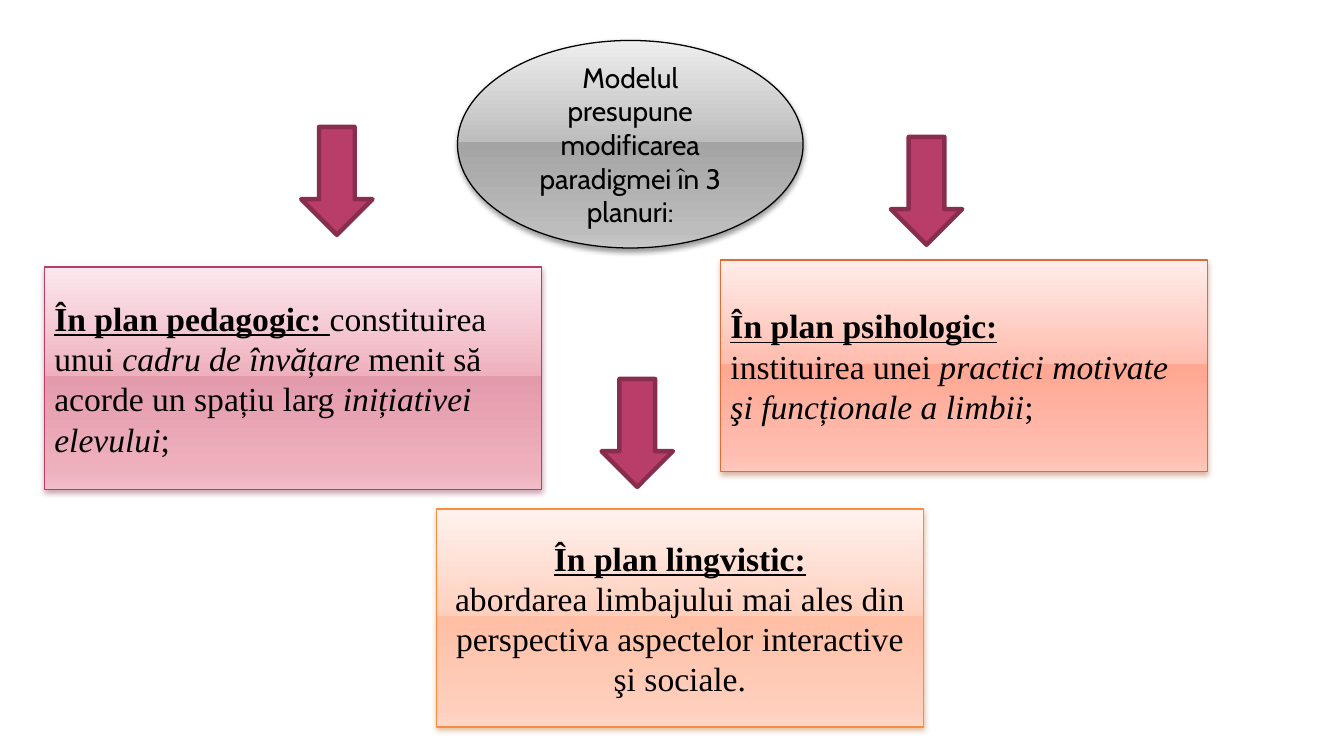
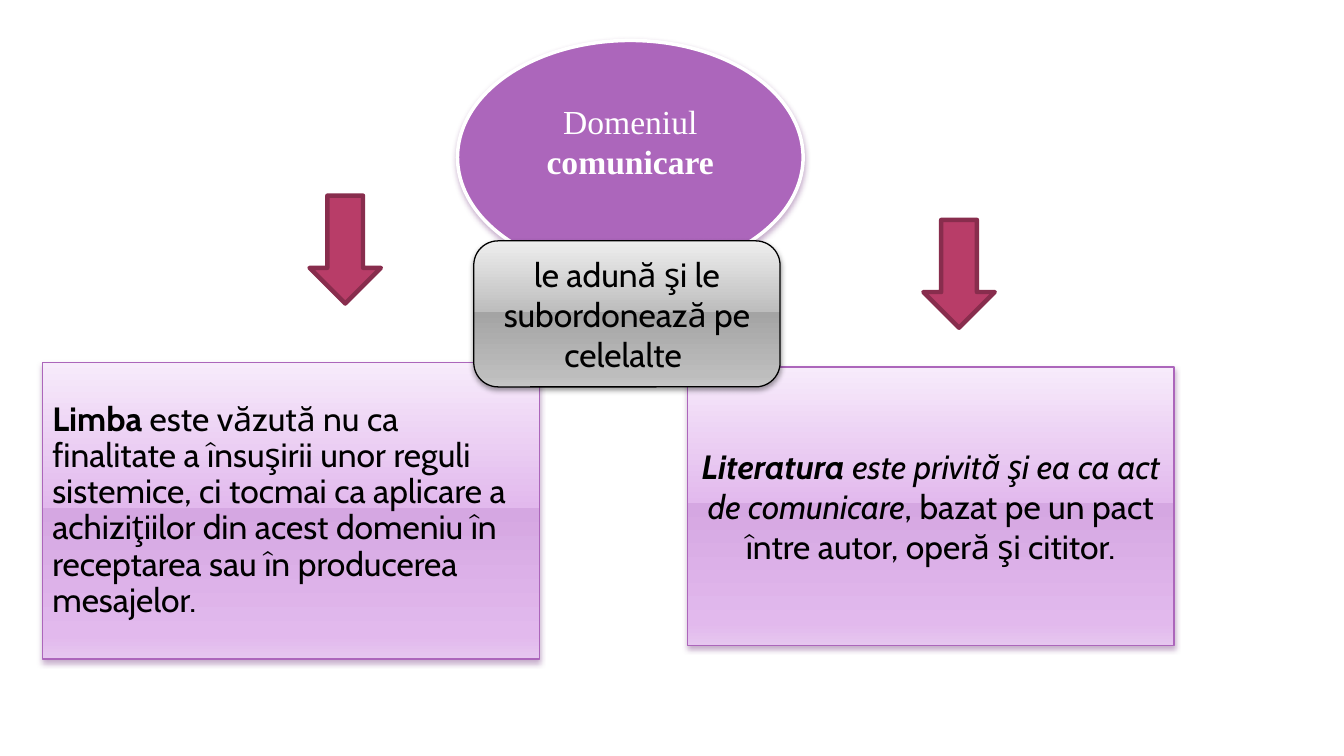
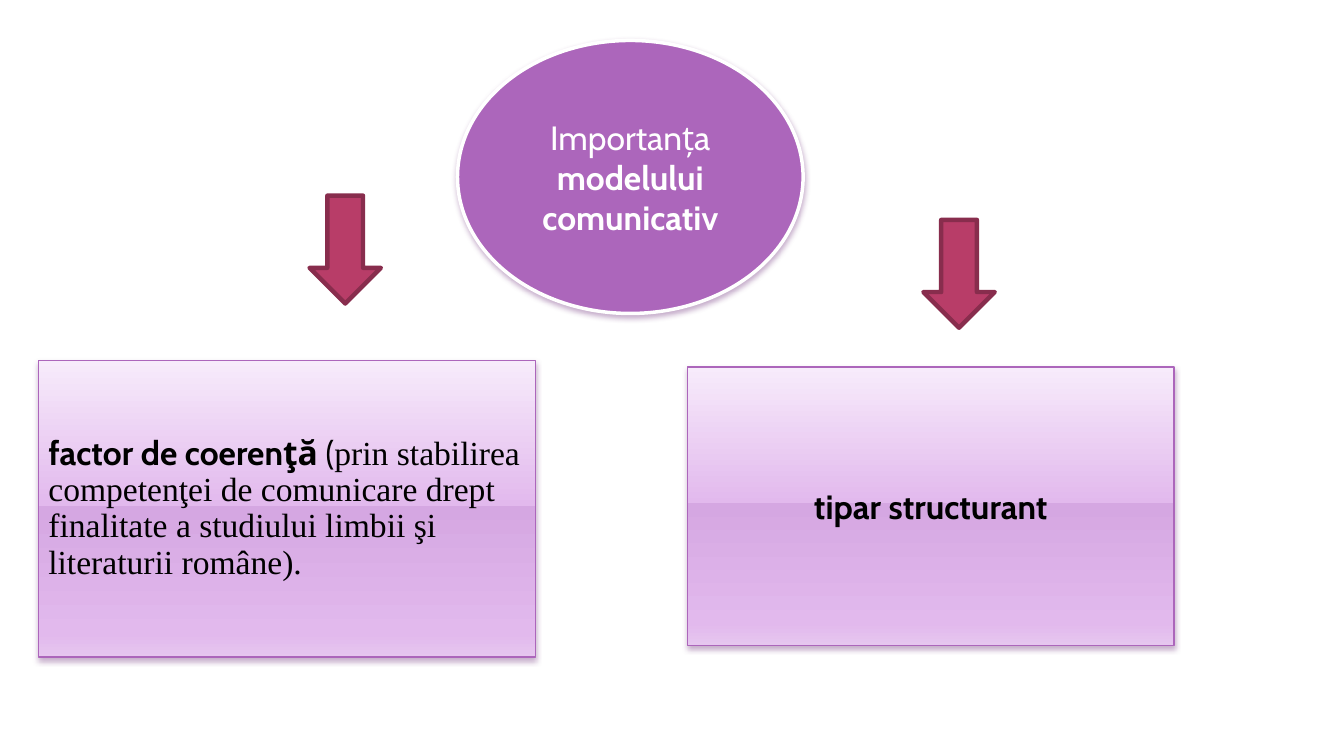
from lxml import etree
from pptx import Presentation
from pptx import util as u
from pptx.dml import color
from pptx.enum import shapes, text
from pptx.oxml import ns

SHAPE = shapes.MSO_SHAPE
LEFT, CENTER = text.PP_ALIGN.LEFT, text.PP_ALIGN.CENTER
SERIF, SANS = "Times New Roman", "Cabin"
BOLD = {"bold": True}
ITALIC = {"italic": True}
HEADING = {"bold": True, "underline": True}
STOPS = (0, 49, 49, 92, 100)
BLACK, WHITE = "000000", "FFFFFF"
STYLES = {
    "grey": dict(fill="EEEEEE BDBDBD A4A4A4 BDBDBD C8C8C8", line=BLACK, shadow=BLACK),
    "rose": dict(fill="FCE8ED EFB0BE E39BAC EFB0BE F0BEC9", line="B83D68", shadow="7F1238"),
    "coral": dict(fill="FFEDEA FFBDAF FFA793 FFBDAF FFC8BC", line="DE6C36", shadow="9C3707"),
    "peach": dict(fill="FFF2EE FFCFBD FFBFA5 FFCFBD FFD7C8", line="FA8D3D", shadow="B04F08"),
    "lilac": dict(fill="F7EBFB E2B9ED D5A7E2 E2B9ED E6C6EF", line="AC66BB", shadow="6E307B"),
    "violet": dict(fill="AC66BB", line=WHITE, width=2.5, shadow="6E307B"),
    "arrow": dict(fill="B83D68", line="882D4D", width=3.15),
}


def rgb(value):
    """Turn a hex string into a colour."""
    return color.RGBColor.from_string(value)


def add_node(parent, tag, **attrs):
    """Append a DrawingML element with the given attributes."""
    return etree.SubElement(parent, ns.qn("a:" + tag), {k: str(v) for k, v in attrs.items()})


def paint(sp, fill, line, width=0.9, shadow=None):
    """Give a shape its fill, outline and soft shadow."""
    stops = fill.split()
    if len(stops) == 1:
        sp.fill.solid()
        sp.fill.fore_color.rgb = rgb(fill)
    else:
        sp.fill.gradient()
        sp.fill.gradient_angle = 270
        gs_list = next(sp._element.spPr.iter(ns.qn("a:gsLst")))
        for old in list(gs_list):
            gs_list.remove(old)
        for position, stop in zip(STOPS, stops):
            add_node(add_node(gs_list, "gs", pos=position * 1000), "srgbClr", val=stop)
    sp.line.color.rgb = rgb(line)
    sp.line.width = u.Pt(width)
    sp.shadow.inherit = False
    if shadow:
        effects = sp._element.spPr.find(ns.qn("a:effectLst"))
        outer = add_node(effects, "outerShdw", blurRad=u.Pt(4), dist=u.Pt(2),
                         dir=5400000, rotWithShape=0)
        add_node(add_node(outer, "srgbClr", val=shadow), "alpha", val=38000)


def add_shape(s, kind, box, style):
    """Place a painted preset shape in a box given in centimetres."""
    sp = s.shapes.add_shape(kind, *map(u.Cm, box))
    paint(sp, **STYLES[style])
    return sp


def panel(s, kind, box, style, paragraphs, font=SANS, size=24, ink=BLACK,
          align=CENTER, spacing=None, **margins):
    """Place a shape with centred-in-height text made of (text, format) runs."""
    tf = add_shape(s, kind, box, style).text_frame
    tf.word_wrap = True
    tf.vertical_anchor = text.MSO_ANCHOR.MIDDLE
    for side, value in margins.items():
        setattr(tf, "margin_" + side, u.Cm(value))
    for i, runs in enumerate(paragraphs):
        p = tf.add_paragraph() if i else tf.paragraphs[0]
        p.alignment = align
        p.line_spacing = spacing
        for words, extra in runs:
            r = p.add_run()
            r.text = words
            r.font.color.rgb = rgb(ink)
            for name, value in {"name": font, "size": u.Pt(size), **extra}.items():
                setattr(r.font, name, value)


def arrows(s, corners):
    """Place a down arrow at each top left corner."""
    for x, y in corners:
        add_shape(s, SHAPE.DOWN_ARROW, (x, y, 1.8, 2.72), "arrow")


def hub(s, height, style, paragraphs, **options):
    """Place the ellipse that heads each slide."""
    panel(s, SHAPE.OVAL, (11.53, 1.02, 8.71, height), style, paragraphs, **options)


def plans_slide(s):
    """Build the slide of the three plans."""
    hub(s, 5.23, "grey", [[("Modelul presupune modificarea paradigmei în 3 planuri:", {})]], size=20)
    arrows(s, [(7.59, 3.2), (22.45, 3.45), (15.16, 9.55)])
    plans = [
        ((1.12, 6.73, 12.52, 5.61), "rose", LEFT,
         [[("În plan pedagogic: ", HEADING), ("constituirea unui ", {}),
           ("cadru de învățare", ITALIC), (" menit să acorde un spațiu larg ", {}),
           ("inițiativei elevului", ITALIC), (";", {})]]),
        ((18.16, 6.55, 12.27, 5.33), "coral", LEFT,
         [[("În plan psihologic:", HEADING)],
          [("instituirea unei ", {}),
           ("practici motivate şi funcționale a limbii", ITALIC), (";", {})]]),
        ((11, 12.83, 12.27, 5.49), "peach", CENTER,
         [[("În plan lingvistic:", HEADING)],
          [("abordarea limbajului mai ales din perspectiva aspectelor interactive şi sociale.", {})]]),
    ]
    for box, style, align, paragraphs in plans:
        panel(s, SHAPE.RECTANGLE, box, style, paragraphs, font=SERIF, align=align)


def branches(s, left_corner, left_runs, right_runs):
    """Place two arrows and the two lilac panels below them."""
    arrows(s, [(7.8, 4.93), (23.27, 5.54)])
    panel(s, SHAPE.RECTANGLE, (*left_corner, 12.52, 7.47), "lilac", [left_runs],
          align=LEFT, spacing=0.9, right=0.35)
    panel(s, SHAPE.RECTANGLE, (17.32, 9.25, 12.27, 7.01), "lilac", [right_runs])


def domain_slide(s):
    """Build the slide of the communication domain."""
    hub(s, 5.89, "violet", [[("Domeniul ", {}), ("comunicare", BOLD)]],
        font=SERIF, ink=WHITE, bottom=0.95)
    branches(
        s, (1.07, 9.14),
        [("Limba", BOLD),
         (" este văzută nu ca finalitate a însuşirii unor reguli sistemice, ci tocmai ca aplicare "
          "a achiziţiilor din acest domeniu în receptarea sau în producerea mesajelor.", {})],
        [("Literatura", {**BOLD, **ITALIC}), (" este privită şi ea ca act de comunicare", ITALIC),
         (", bazat pe un pact între autor, operă şi cititor.", {})])
    panel(s, SHAPE.ROUNDED_RECTANGLE, (11.94, 6.07, 7.72, 3.68), "grey",
          [[("le adună şi le subordonează pe celelalte ", {})]])


def importance_slide(s):
    """Build the slide on the importance of the model."""
    hub(s, 6.88, "violet", [[("Importanța ", {}), ("modelului comunicativ", BOLD)]], ink=WHITE)
    branches(
        s, (0.97, 9.09),
        [("factor de coerenţă ", BOLD), ("(", {}),
         ("prin stabilirea competenţei de comunicare drept finalitate a studiului limbii "
          "şi literaturii române).", {"name": SERIF})],
        [("tipar structurant", BOLD)])


def main():
    """Build and save the presentation."""
    prs = Presentation()
    prs.slide_width, prs.slide_height = u.Cm(33.87), u.Cm(19.05)
    for build in (plans_slide, domain_slide, importance_slide):
        build(prs.slides.add_slide(prs.slide_layouts[6]))
    prs.save("out.pptx")


if __name__ == "__main__":
    main()
